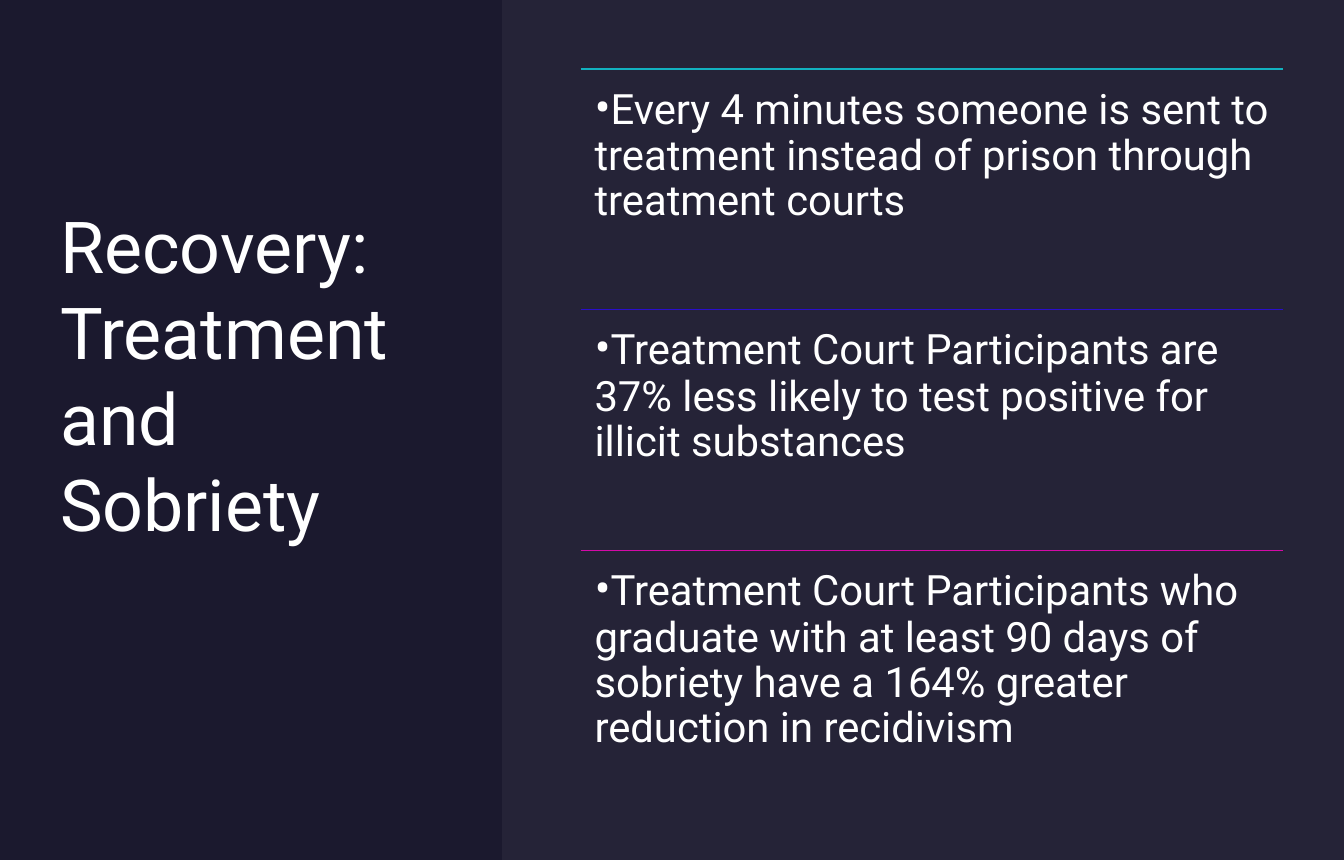
from lxml.etree import SubElement
from pptx import Presentation
from pptx.dml.color import RGBColor
from pptx.enum.shapes import MSO_CONNECTOR, MSO_SHAPE
from pptx.enum.text import MSO_ANCHOR
from pptx.oxml.ns import qn
from pptx.util import Inches, Pt

COLORS = {
    "background": "1B192E",
    "panel": "E4E3F0",
    "text": "FFFFFF",
    "teal": "12B1BF",
    "indigo": "2A0EC9",
    "magenta": "D40AA8",
}
FONT = "Roboto"
FACTS = [
    ("teal", "Every 4 minutes someone is sent to treatment instead of prison "
             "through treatment courts"),
    ("indigo", "Treatment Court Participants are 37% less likely to test "
               "positive for illicit substances"),
    ("magenta", "Treatment Court Participants who graduate with at least 90 days "
                "of sobriety have a 164% greater reduction in recidivism"),
]
FACT_LEFT, FACT_TOP, FACT_WIDTH, FACT_HEIGHT = 5.4, 0.64, 6.53, 2.24


def rgb(name):
    return RGBColor.from_string(COLORS[name])


def add_panel(slide, left, top, width, height, color, opacity):
    """Add a borderless rectangle; opacity is in percent."""
    sp = slide.shapes.add_shape(MSO_SHAPE.RECTANGLE, Inches(left), Inches(top),
                                Inches(width), Inches(height))
    sp.shadow.inherit = False
    sp.line.fill.background()
    sp.fill.solid()
    sp.fill.fore_color.rgb = rgb(color)
    srgb = sp.fill._xPr.find(".//" + qn("a:srgbClr"))
    SubElement(srgb, qn("a:alpha"), val=str(opacity * 1000))


def add_text(slide, left, top, width, height, runs, line_spacing=1.0, **frame):
    """Add one paragraph of (text, size) runs; frame holds text frame settings."""
    box = slide.shapes.add_textbox(Inches(left), Inches(top),
                                   Inches(width), Inches(height))
    tf = box.text_frame
    for name, value in {"word_wrap": True, **frame}.items():
        setattr(tf, name, value)
    p = tf.paragraphs[0]
    p.line_spacing = line_spacing
    for text, size in runs:
        r = p.add_run()
        r.text = text
        for name, value in {"name": FONT, "size": Pt(size)}.items():
            setattr(r.font, name, value)
        r.font.color.rgb = rgb("text")


def margins(left, top, right, bottom):
    sides = {"left": left, "top": top, "right": right, "bottom": bottom}
    return {f"margin_{side}": Inches(size) for side, size in sides.items()}


def add_rule(slide, left, top, width, color):
    line = slide.shapes.add_connector(MSO_CONNECTOR.STRAIGHT, Inches(left), Inches(top),
                                      Inches(left + width), Inches(top))
    line.line.color.rgb = rgb(color)
    line.line.width = Pt(1)
    SubElement(line._element.spPr, qn("a:effectLst"))


def add_fact(slide, top, color, text):
    add_rule(slide, FACT_LEFT, top, FACT_WIDTH, color)
    add_text(slide, FACT_LEFT, top, FACT_WIDTH, FACT_HEIGHT,
             [("•", 32), (text, 28)], line_spacing=0.9,
             **margins(0.13, 0.13, 0.13, 0.13))


def main():
    prs = Presentation()
    prs.slide_width, prs.slide_height = Inches(12.5), Inches(8)
    slide = prs.slides.add_slide(prs.slide_layouts[6])
    slide.background.fill.solid()
    slide.background.fill.fore_color.rgb = rgb("background")

    add_panel(slide, 0, 0, 12.5, 8, "background", 100)
    # The bottom margin lifts the title above the middle by half a line.
    add_text(slide, 0.56, 0.64, 3.66, 6.47,
             [("Recovery: Treatment and Sobriety", 48)],
             vertical_anchor=MSO_ANCHOR.MIDDLE, **margins(0, 0, 0, 0.8))
    add_panel(slide, 4.67, 0, 7.83, 8, "panel", 5)
    for i, (color, text) in enumerate(FACTS):
        add_fact(slide, FACT_TOP + i * FACT_HEIGHT, color, text)

    prs.save("out.pptx")


if __name__ == "__main__":
    main()
